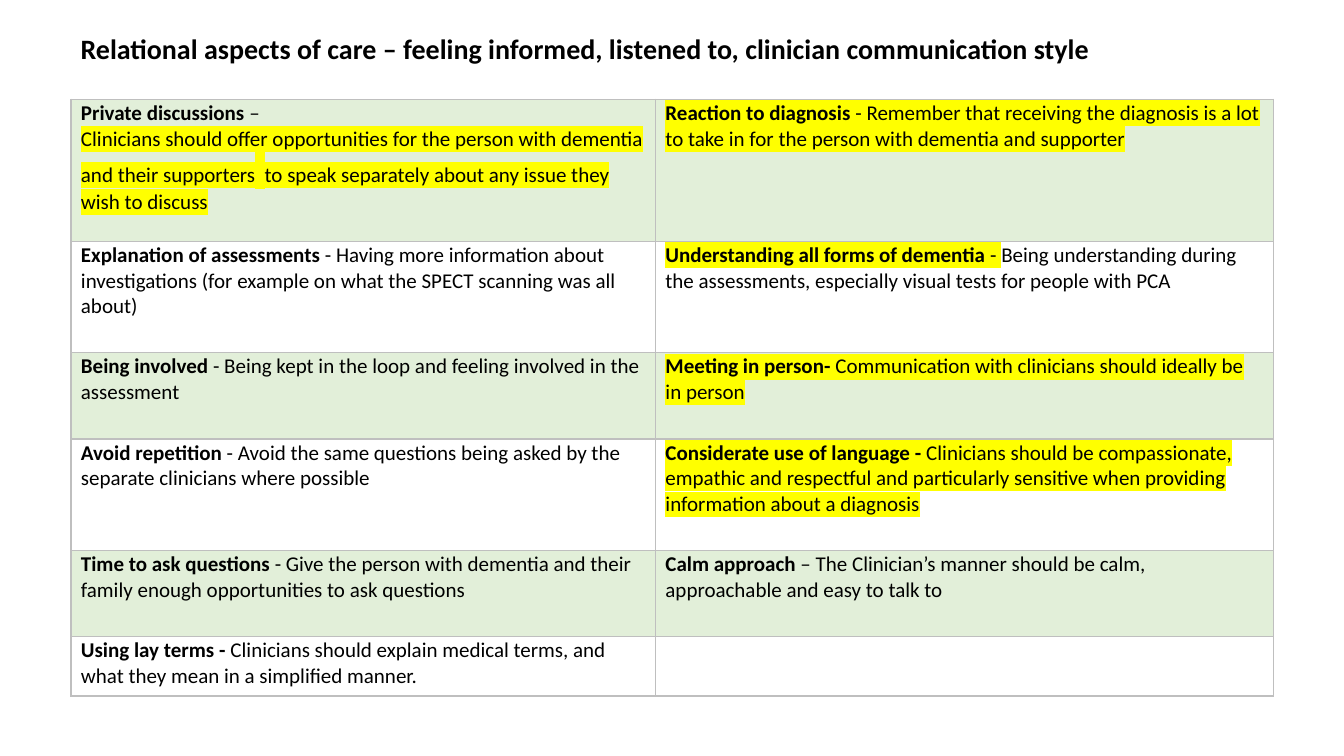
from dataclasses import dataclass

from lxml import etree
from pptx import Presentation
from pptx.dml.color import RGBColor
from pptx.enum.text import MSO_AUTO_SIZE
from pptx.oxml.ns import qn
from pptx.util import Cm, Pt

FIT_SHAPE = MSO_AUTO_SIZE.SHAPE_TO_FIT_TEXT


@dataclass(frozen=True)
class Theme:
    """Colours, fonts and type sizes of the slide."""
    text: str = "000000"
    band: str = "E2EFD9"
    plain: str = "FFFFFF"
    border: str = "BFBFBF"
    marker: str = "FFFF00"
    font: str = "Calibri"
    gap_font: str = "Arial"
    title_size: int = 20
    body_size: int = 15
    gap_size: int = 24


@dataclass(frozen=True)
class Phrase:
    """A stretch of text with one look."""
    text: str
    bold: bool = False
    marked: bool = False
    wide_gap: bool = False


THEME = Theme()
TITLE = "Relational aspects of care – feeling informed, listened to, clinician communication style"
COLUMN_WIDTHS = (14.73, 15.57)
ROW_HEIGHTS = (3.58, 2.81, 2.17, 2.81, 2.17, 1.5)


def advice(heading, body, heading_marked=False, body_marked=False):
    """Return a one-paragraph cell with a bold heading and its advice."""
    return [[Phrase(heading, True, heading_marked), Phrase(body, False, body_marked)]]


PRIVATE_DISCUSSIONS = [
    [Phrase("Private discussions ", True), Phrase("–")],
    [Phrase("Clinicians should offer opportunities for the person with dementia "
            "and their supporters", marked=True),
     Phrase(" ", marked=True, wide_gap=True),
     Phrase("to speak separately about any issue they wish to discuss", marked=True)],
]
ALL_FORMS = [[
    Phrase("Understanding all forms of dementia ", True, True),
    Phrase("- ", marked=True),
    Phrase("Being understanding during the assessments, especially visual tests "
           "for people with PCA"),
]]
ADVICE_ROWS = [
    (PRIVATE_DISCUSSIONS,
     advice("Reaction to diagnosis ",
            "- Remember that receiving the diagnosis is a lot to take in for the "
            "person with dementia and supporter", True, True)),
    (advice("Explanation of assessments ",
            "- Having more information about investigations (for example on what "
            "the SPECT scanning was all about)"),
     ALL_FORMS),
    (advice("Being involved ",
            "- Being kept in the loop and feeling involved in the assessment"),
     advice("Meeting in person- ",
            "Communication with clinicians should ideally be in person", True, True)),
    (advice("Avoid repetition ",
            "- Avoid the same questions being asked by the separate clinicians "
            "where possible"),
     advice("Considerate use of language - ",
            "Clinicians should be compassionate, empathic and respectful and "
            "particularly sensitive when providing information about a diagnosis",
            True, True)),
    (advice("Time to ask questions ",
            "- Give the person with dementia and their family enough opportunities "
            "to ask questions"),
     advice("Calm approach ",
            "– The Clinician’s manner should be calm, approachable and easy to talk to")),
    (advice("Using lay terms - ",
            "Clinicians should explain medical terms, and what they mean in a "
            "simplified manner."),
     []),
]


def add_colour(parent, tag, colour):
    """Append an element of the given tag that holds one colour."""
    holder = etree.SubElement(parent, qn(tag))
    etree.SubElement(holder, qn("a:srgbClr"), val=colour)


def set_font(font, size):
    """Give a font the theme's typeface, text colour and a size."""
    font.name = THEME.font
    font.size = Pt(size)
    font.color.rgb = RGBColor.from_string(THEME.text)


def add_phrase(paragraph, phrase):
    """Add one phrase to a paragraph, with its weight and marker."""
    run = paragraph.add_run()
    run.text = phrase.text
    run.font.bold = phrase.bold
    if phrase.marked:
        add_colour(run.font._element, "a:highlight", THEME.marker)
    if phrase.wide_gap:
        run.font.name = THEME.gap_font
        run.font.size = Pt(THEME.gap_size)


def draw_borders(cell):
    """Draw the four thin borders of a cell."""
    properties = cell._tc.get_or_add_tcPr()
    for side in ("a:lnL", "a:lnR", "a:lnT", "a:lnB"):
        line = etree.SubElement(properties, qn(side), w=str(Pt(1)))
        add_colour(line, "a:solidFill", THEME.border)


def fill_cell(cell, paragraphs, colour):
    """Set the borders, fill, margins and text of a cell."""
    draw_borders(cell)
    cell.fill.solid()
    cell.fill.fore_color.rgb = RGBColor.from_string(colour)
    cell.margin_left = cell.margin_right = Cm(0.25)
    cell.margin_top, cell.margin_bottom = Cm(0.03), Cm(0)
    frame = cell.text_frame
    for index, phrases in enumerate(paragraphs):
        paragraph = frame.add_paragraph() if index else frame.paragraphs[0]
        set_font(paragraph.font, THEME.body_size)
        for phrase in phrases:
            add_phrase(paragraph, phrase)


def add_title(slide):
    """Add the slide's heading."""
    title = slide.shapes.add_textbox(Cm(1.78), Cm(0.66), Cm(26.54), Cm(1.11))
    frame = title.text_frame
    frame.word_wrap = True
    frame.auto_size = FIT_SHAPE
    heading = frame.paragraphs[0]
    heading.text = TITLE
    set_font(heading.font, THEME.title_size)
    heading.font.bold = True


def add_advice_table(slide):
    """Add the two-column table of advice with alternating bands."""
    table = slide.shapes.add_table(
        len(ROW_HEIGHTS), len(COLUMN_WIDTHS), Cm(1.79), Cm(2.5),
        Cm(sum(COLUMN_WIDTHS)), Cm(sum(ROW_HEIGHTS))).table
    table.first_row = table.horz_banding = False
    for column, width in zip(table.columns, COLUMN_WIDTHS):
        column.width = Cm(width)
    for index, (row, height) in enumerate(zip(table.rows, ROW_HEIGHTS)):
        row.height = Cm(height)
        colour = THEME.plain if index % 2 else THEME.band
        for cell, paragraphs in zip(row.cells, ADVICE_ROWS[index]):
            fill_cell(cell, paragraphs, colour)


def main():
    """Build and save the slide."""
    presentation = Presentation()
    presentation.slide_width, presentation.slide_height = Cm(33.87), Cm(19.05)
    slide = presentation.slides.add_slide(presentation.slide_layouts[6])
    add_advice_table(slide)
    add_title(slide)
    presentation.save("out.pptx")


if __name__ == "__main__":
    main()
